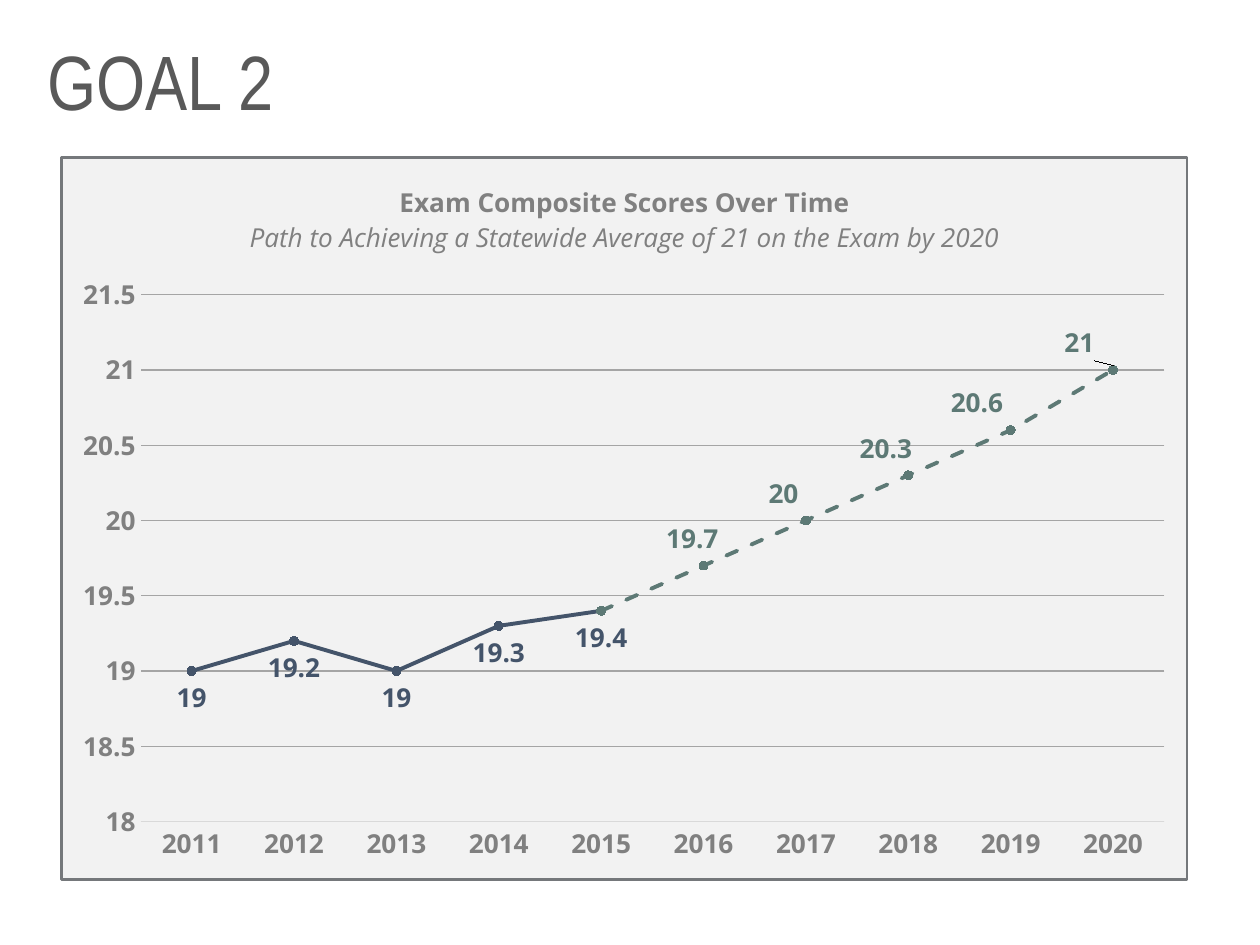
from lxml import etree
from pptx import Presentation
from pptx import util as u
from pptx.chart import data
from pptx.dml import color
from pptx.enum import chart as ch, dml, text
from pptx.oxml import ns, parse_xml

COLORS = {
    "heading": "595959", "label": "808080", "grid": "A5A5A5", "axis": "D9D9D9",
    "panel": "F2F2F2", "border": "75787B", "actual": "44546A", "target": "5D7975",
}
YEARS = [str(year) for year in range(2011, 2021)]
ACTUAL = [19, 19.2, 19, 19.3, 19.4] + [None] * 5
TARGET = [None] * 4 + [19.4, 19.7, 20, 20.3, 20.6, 21]
ACTUAL_SHIFTS = dict.fromkeys(range(5), 0)
TARGET_SHIFTS = {5: -0.01, 6: -0.02, 7: -0.02, 8: -0.03, 9: -0.03}


class SlideBuilder:
    """Holds the style and the current slide, and adds elements to it."""

    def __init__(self, slide):
        self.slide = slide
        self.heading_font = "Arial Narrow"
        self.chart_font = "Open Sans"
        self.chart_size = u.Pt(15)

    def rgb(self, name):
        return color.RGBColor.from_string(COLORS[name])

    def style(self, font, name="label", bold=True, italic=False):
        font.name, font.size = self.chart_font, self.chart_size
        font.bold, font.italic = bold, italic
        font.color.rgb = self.rgb(name)

    def line(self, line, name, width):
        line.color.rgb = self.rgb(name)
        line.width = u.Pt(width)

    def heading(self, words, left, top, width, height):
        frame = self.slide.shapes.add_textbox(
            u.Pt(left), u.Pt(top), u.Pt(width), u.Pt(height)).text_frame
        frame.word_wrap = True
        frame.vertical_anchor = text.MSO_ANCHOR.MIDDLE
        frame.text = words
        paragraph = frame.paragraphs[0]
        paragraph.line_spacing = 0.9
        font = paragraph.runs[0].font
        font.name, font.size = self.heading_font, u.Pt(44)
        font.color.rgb = self.rgb("heading")

    def line_chart(self, categories, series, left, top, width, height):
        scores = data.CategoryChartData()
        scores.categories = categories
        for name, values in series:
            scores.add_series(name, values)
        chart = self.slide.shapes.add_chart(
            ch.XL_CHART_TYPE.LINE_MARKERS, u.Pt(left), u.Pt(top),
            u.Pt(width), u.Pt(height), scores).chart
        self.style(chart.font)
        chart.has_legend = False
        chart.plots[0].vary_by_categories = False
        return chart

    def chart_title(self, chart, title, subtitle):
        frame = chart.chart_title.text_frame
        frame.text = title
        frame.add_paragraph().text = subtitle
        self.style(frame.paragraphs[0].runs[0].font)
        self.style(frame.paragraphs[1].runs[0].font, bold=False, italic=True)
        chart.chart_title.include_in_layout = False

    def axes(self, chart, low, high, step):
        for axis in (chart.category_axis, chart.value_axis):
            axis.major_tick_mark = axis.minor_tick_mark = ch.XL_TICK_MARK.NONE
            self.style(axis.tick_labels.font)
        self.line(chart.category_axis.format.line, "axis", 0.75)
        scale = chart.value_axis
        scale.minimum_scale, scale.maximum_scale, scale.major_unit = low, high, step
        scale.format.line.fill.background()
        scale.has_major_gridlines = True
        self.line(scale.major_gridlines.format.line, "grid", 0.75)

    def series(self, series, name, position, shifts, dash=None):
        series.smooth = False
        self.line(series.format.line, name, 2.25)
        series._element.find(f'{ns.qn("c:spPr")}/{ns.qn("a:ln")}').set("cap", "rnd")
        if dash:
            series.format.line.dash_style = dash
        series.marker.style = ch.XL_MARKER_STYLE.CIRCLE
        series.marker.size = 5
        series.marker.format.fill.solid()
        series.marker.format.fill.fore_color.rgb = self.rgb(name)
        self.line(series.marker.format.line, name, 0.75)
        labels = series.data_labels
        labels.show_value = False
        for index, shift in shifts.items():
            label = series.points[index].data_label
            self.style(label.font, name)
            label.position = position
            if shift:
                entry = labels._element.xpath(f'c:dLbl[c:idx/@val="{index}"]')[0]
                entry.find(ns.qn("c:idx")).addnext(self.layout(x=shift, y=0))
        self.hide_leader_lines(labels)

    def hide_leader_lines(self, labels):
        labels._element.append(parse_xml(
            f'<c:extLst {ns.nsdecls("c")}>'
            '<c:ext uri="{CE6537A1-D6FC-4f65-9D91-7224C49458BB}" '
            'xmlns:c15="http://schemas.microsoft.com/office/drawing/2012/chart">'
            '<c15:showLeaderLines val="0"/></c:ext></c:extLst>'))

    def layout(self, inner=False, **places):
        layout = etree.Element(ns.qn("c:layout"))
        manual = etree.SubElement(layout, ns.qn("c:manualLayout"))
        if inner:
            etree.SubElement(manual, ns.qn("c:layoutTarget")).set("val", "inner")
            for mode in ("xMode", "yMode"):
                etree.SubElement(manual, ns.qn(f"c:{mode}")).set("val", "edge")
        for key, value in places.items():
            etree.SubElement(manual, ns.qn(f"c:{key}")).set("val", str(value))
        return layout

    def plot_place(self, chart, **places):
        area = chart.element.find(".//" + ns.qn("c:plotArea"))
        for old in area.findall(ns.qn("c:layout")):
            area.remove(old)
        area.insert(0, self.layout(inner=True, **places))

    def panel(self, chart, fill, border, width):
        chart.element.find(ns.qn("c:chart")).addnext(parse_xml(
            f'<c:spPr {ns.nsdecls("c", "a")}>'
            f'<a:solidFill><a:srgbClr val="{COLORS[fill]}"/></a:solidFill>'
            f'<a:ln w="{u.Pt(width)}"><a:solidFill><a:srgbClr val="{COLORS[border]}"/>'
            '</a:solidFill></a:ln></c:spPr>'))


def main():
    deck = Presentation()
    deck.slide_width, deck.slide_height = u.Pt(720), u.Pt(540)
    builder = SlideBuilder(deck.slides.add_slide(deck.slide_layouts[6]))
    builder.heading("GOAL 2", 20.16, 11, 620.64, 76.32)
    scores = builder.line_chart(
        YEARS, [("Series 1", ACTUAL), ("Series 2", TARGET)], 34.56, 89.28, 644.4, 414)
    builder.chart_title(scores, "Exam Composite Scores Over Time",
                        "Path to Achieving a Statewide Average of 21 on the Exam by 2020")
    builder.axes(scores, 18, 21.5, 0.5)
    builder.plot_place(scores, x=0.07, y=0.19, w=0.91, h=0.73)
    builder.panel(scores, "panel", "border", 1.5)
    actual, target = scores.plots[0].series
    builder.series(actual, "actual", ch.XL_LABEL_POSITION.BELOW, ACTUAL_SHIFTS)
    builder.series(target, "target", ch.XL_LABEL_POSITION.ABOVE, TARGET_SHIFTS,
                   dml.MSO_LINE.DASH)
    deck.save("out.pptx")


if __name__ == "__main__":
    main()
